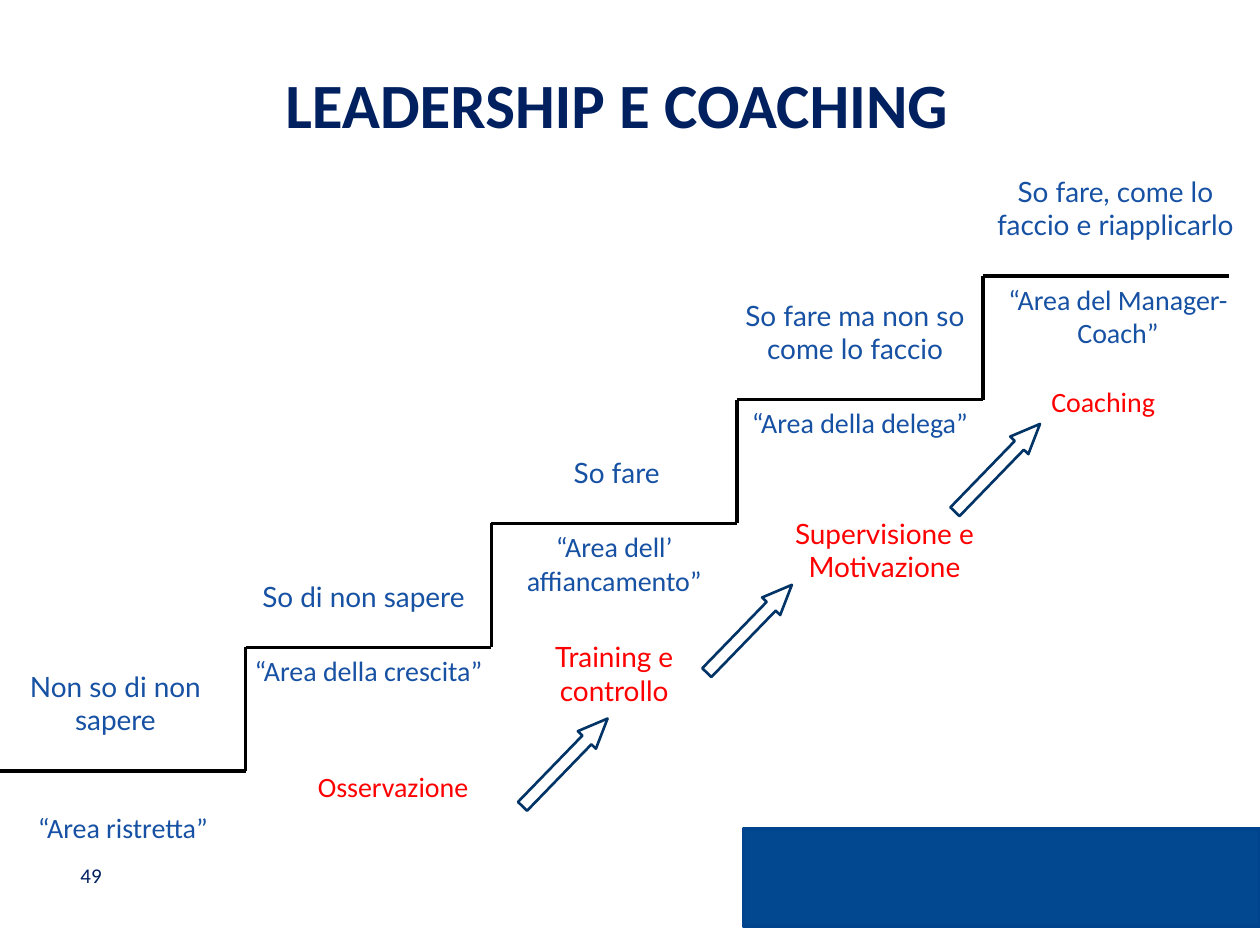
from collections import namedtuple
from dataclasses import dataclass

from lxml.etree import SubElement
from pptx import Presentation
from pptx.dml.color import RGBColor
from pptx.enum.shapes import MSO_CONNECTOR, MSO_SHAPE
from pptx.enum.text import MSO_ANCHOR, PP_ALIGN
from pptx.oxml.ns import qn
from pptx.util import Inches, Pt

Box = namedtuple("Box", "left top width height")
# Shifts and widths are shares of a column; drops are shares of a rise.
Step = namedtuple(
    "Step", "label lines label_shift label_width area area_shift area_drop "
            "action action_shift action_drop arrow")


@dataclass(frozen=True)
class Theme:
    navy: str = "002060"
    blue: str = "1751A3"
    red: str = "FF0000"
    black: str = "000000"
    arrow: str = "003366"
    band: str = "014890"
    band_edge: str = "00448D"
    font: str = "Calibri"
    label_font: str = "Lato"
    title_size: int = 36
    body_size: int = 16
    number_size: int = 12
    line_width: float = 2
    arrow_width: float = 1.5
    inset: float = 0.05
    line_height: float = 0.27


THEME = Theme()
SLIDE_WIDTH, SLIDE_HEIGHT = 10, 7.5

STEPS = [
    Step("Non so di non sapere", 2, -0.03, 0.95, "“Area ristretta”", 0, 0.27,
         "", 0, 0, None),
    Step("So di non sapere", 1, -0.02, 0.93, "“Area della crescita”", 0, 0,
         "Osservazione", 0.1, 0.94, (1.3, 0.93)),
    Step("So fare", 1, 0.01, 0.96, "“Area dell’ affiancamento”", 0, 0,
         "Training e\ncontrollo", 0, 0.89, (1.05, 0.85)),
    Step("So fare ma non so come lo faccio", 2, -0.02, 0.99, "“Area della delega”", 0, 0,
         "Supervisione e\nMotivazione", 0.1, 0.89, (1.06, 0.55)),
    Step("So fare, come lo faccio e riapplicarlo", 2, 0.04, 1.15,
         "“Area del Manager-Coach”", 0.05, 0, "Coaching", -0.01, 0.83, None),
]


def color(value):
    return RGBColor.from_string(value)


def add_text(slide, box, text, size, text_color, font=THEME.font, bold=False,
             align=PP_ALIGN.CENTER, anchor=MSO_ANCHOR.TOP, side_inset=THEME.inset):
    frame = slide.shapes.add_textbox(*map(Inches, box)).text_frame
    frame.word_wrap = True
    frame.vertical_anchor = anchor
    frame.margin_left = frame.margin_right = Inches(side_inset)
    frame.margin_top = frame.margin_bottom = Inches(THEME.inset)
    frame.text = text
    for paragraph in frame.paragraphs:
        paragraph.alignment = align
        paragraph.font.name = font
        paragraph.font.size = Pt(size)
        paragraph.font.bold = bold
        paragraph.font.color.rgb = color(text_color)


def add_centered(slide, center, top, width, lines, text, text_color, font=THEME.font):
    height = lines * THEME.line_height + 2 * THEME.inset
    box = Box(center - width / 2, top, width, height)
    add_text(slide, box, text, THEME.body_size, text_color, font)


def add_line(slide, start, end):
    line = slide.shapes.add_connector(
        MSO_CONNECTOR.STRAIGHT, *map(Inches, (*start, *end)))
    line.line.color.rgb = color(THEME.black)
    line.line.width = Pt(THEME.line_width)
    SubElement(line._element.spPr, qn("a:effectLst"))


def add_arrow(slide, center_x, center_y, width=0.97, height=0.2):
    arrow = slide.shapes.add_shape(
        MSO_SHAPE.RIGHT_ARROW, Inches(center_x - width / 2),
        Inches(center_y - height / 2), Inches(width), Inches(height))
    arrow.adjustments[0], arrow.adjustments[1] = 0.5, 1.18
    arrow.rotation = 314.1
    arrow.shadow.inherit = False
    arrow.fill.background()
    arrow.line.color.rgb = color(THEME.arrow)
    arrow.line.width = Pt(THEME.arrow_width)


def add_title(slide, box):
    add_text(slide, box, "LEADERSHIP E COACHING", THEME.title_size, THEME.navy,
             bold=True, anchor=MSO_ANCHOR.MIDDLE, side_inset=0.1)


def add_footer(slide, box):
    # Colour band on the right
    band_left = box.left + 0.59 * box.width
    band = slide.shapes.add_shape(
        MSO_SHAPE.RECTANGLE, Inches(band_left), Inches(box.top),
        Inches(box.left + box.width - band_left), Inches(box.height))
    band.shadow.inherit = False
    band.fill.solid()
    band.fill.fore_color.rgb = color(THEME.band)
    band.line.color.rgb = color(THEME.band_edge)
    band.line.width = Pt(THEME.line_width)

    # Slide number on the left
    number_box = Box(box.left + 0.054 * box.width, box.top + 0.21 * box.height,
                     0.23 * box.width, 0.52 * box.height)
    add_text(slide, number_box, "49", THEME.number_size, THEME.navy,
             align=PP_ALIGN.LEFT, anchor=MSO_ANCHOR.MIDDLE, side_inset=0.1)


def add_staircase(slide, box):
    column = box.width / len(STEPS)
    rise = box.height / (len(STEPS) - 1)
    for index, step in enumerate(STEPS):
        left = box.left + index * column
        center = left + column / 2
        tread = box.top + box.height - index * rise

        # Tread, and the riser that leads up to it
        add_line(slide, (left, tread), (left + column, tread))
        if index:
            add_line(slide, (left, tread + rise), (left, tread))

        # Awareness above the tread, area below it
        label_height = step.lines * THEME.line_height + 2 * THEME.inset
        add_centered(slide, center + step.label_shift * column,
                     tread - 0.22 * rise - label_height, step.label_width * column,
                     step.lines, step.label, THEME.blue, THEME.label_font)
        area_lines = 2 if index in (2, 4) else 1
        add_centered(slide, center + step.area_shift * column,
                     tread + step.area_drop * rise, column, area_lines,
                     step.area, THEME.blue)

        # Coaching action and the arrow to the next one
        if step.action:
            action_lines = step.action.count("\n") + 1
            font = THEME.label_font if action_lines > 1 else THEME.font
            add_centered(slide, center + step.action_shift * column,
                         tread + step.action_drop * rise, column, action_lines,
                         step.action, THEME.red, font)
        if step.arrow:
            across, down = step.arrow
            add_arrow(slide, left + across * column, tread + down * rise)


def main():
    presentation = Presentation()
    presentation.slide_width = Inches(SLIDE_WIDTH)
    presentation.slide_height = Inches(SLIDE_HEIGHT)
    slide = presentation.slides.add_slide(presentation.slide_layouts[6])
    add_footer(slide, Box(0, 6.58, SLIDE_WIDTH, 0.77))
    add_title(slide, Box(1.71, 0.11, 6.37, 1.42))
    add_staircase(slide, Box(0, 2.19, 9.75, 3.93))
    presentation.save("out.pptx")


if __name__ == "__main__":
    main()
